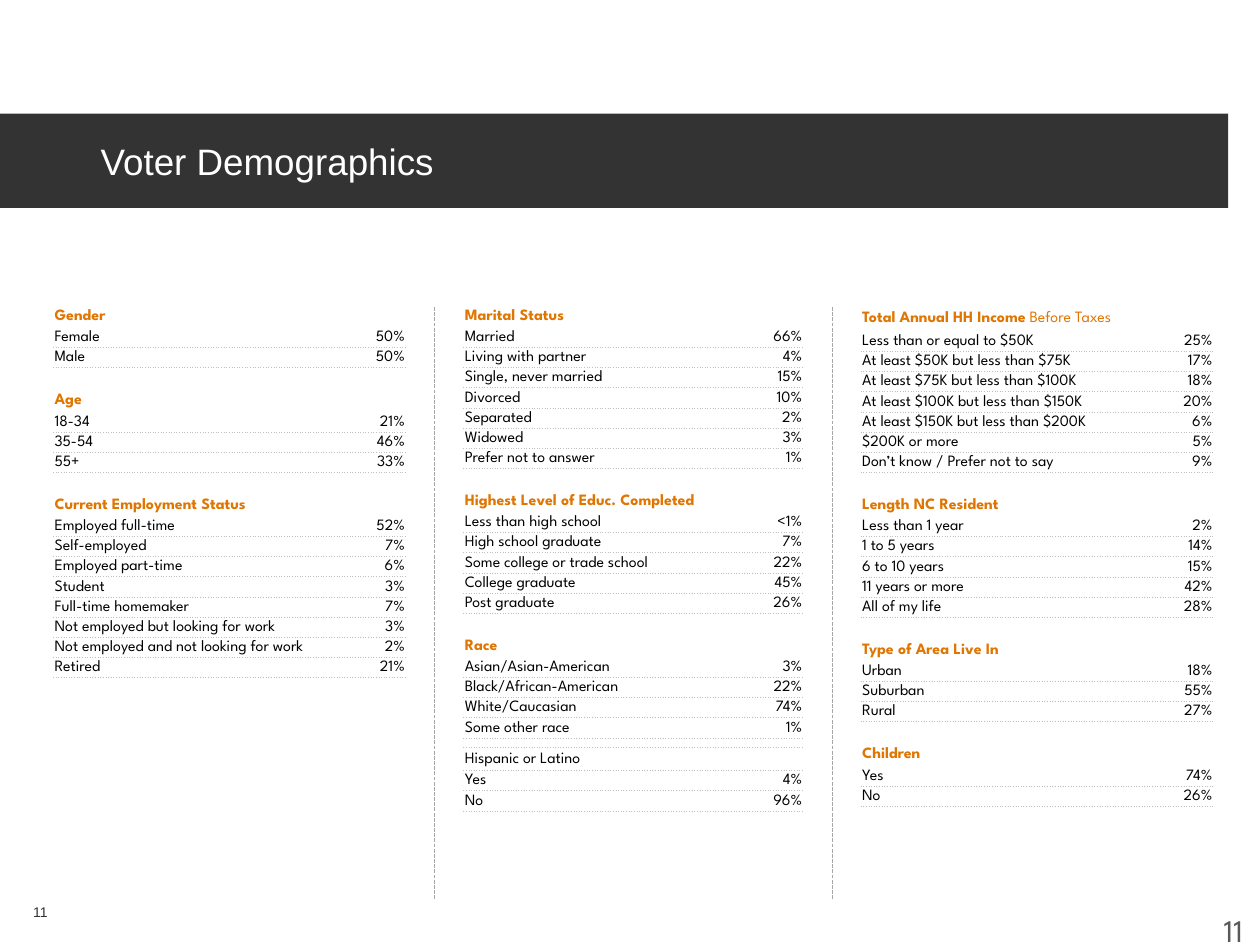
from dataclasses import dataclass

from lxml import etree
from pptx import Presentation
from pptx import util as u
from pptx.dml.color import RGBColor
from pptx.enum import dml, shapes, text
from pptx.oxml import parse_xml
from pptx.oxml.ns import nsdecls, qn


@dataclass(frozen=True)
class Theme:
    dark: str = "333333"
    light: str = "FFFFFF"
    ink: str = "000000"
    head: str = "E07602"
    page: str = "595959"
    rule: str = "BFBFBF"
    split: str = "A6A6A6"
    sans: str = "Arial"
    body: str = "League Spartan"
    title: float = 21
    large: float = 18
    small: float = 9
    foot: float = 8


LOOK = Theme()
LEFT, RIGHT = text.PP_ALIGN.LEFT, text.PP_ALIGN.RIGHT
PLAIN = "{2D5ABB26-0587-4C30-8999-92F81FD0307C}"
ROW, HEAD, GAP, SLIM, SUB = 0.4, 0.45, 0.44, 0.2, 0.46


def write(frame, words, size=LOOK.small, face=LOOK.body, color=LOOK.ink,
          bold=False, align=LEFT, space=None):
    para = frame.paragraphs[0]
    para.alignment = align
    if space:
        para.line_spacing = space
    for part, heavy in [(words, bold)] if isinstance(words, str) else words:
        run = para.add_run()
        run.text = part
        run.font.size = u.Pt(size)
        run.font.name = face
        run.font.bold = heavy
        run.font.color.rgb = RGBColor.from_string(color)


def inset(item, left, top, right, bottom):
    item.margin_left, item.margin_top = u.Cm(left), u.Cm(top)
    item.margin_right, item.margin_bottom = u.Cm(right), u.Cm(bottom)


class Deck:
    def __init__(self, look):
        self.look = look
        self.show = Presentation()
        self.show.slide_width = u.Cm(25.4)
        self.show.slide_height = u.Cm(19.05)
        self.page = self.show.slides.add_slide(self.show.slide_layouts[5])

    def title(self, words, box):
        bar = self.page.shapes.title
        bar.left, bar.top, bar.width, bar.height = map(u.Cm, box)
        bar.fill.solid()
        bar.fill.fore_color.rgb = RGBColor.from_string(self.look.dark)
        frame = bar.text_frame
        frame.auto_size = text.MSO_AUTO_SIZE.NONE
        frame.vertical_anchor = text.MSO_ANCHOR.MIDDLE
        inset(frame, 2.03, 0, 0, 0)
        write(frame, words, self.look.title, self.look.sans, self.look.light)

    def label(self, words, box, pad, **form):
        frame = self.page.shapes.add_textbox(*map(u.Cm, box)).text_frame
        frame.word_wrap = True
        inset(frame, *pad)
        write(frame, words, **form)

    def line(self, x, top, end):
        rule = self.page.shapes.add_connector(
            shapes.MSO_CONNECTOR.STRAIGHT, *map(u.Cm, (x, top, x, end)))
        rule.line.color.rgb = RGBColor.from_string(self.look.split)
        rule.line.width = u.Pt(0.75)
        rule.line.dash_style = dml.MSO_LINE.SQUARE_DOT
        etree.SubElement(rule._element.spPr, qn("a:effectLst"))

    def cell(self, cell, words, ruled, **form):
        cell.fill.background()
        cell.vertical_anchor = text.MSO_ANCHOR.MIDDLE
        if words:
            inset(cell, 0.03, 0.05, 0.03, 0.03)
            write(cell.text_frame, words, space=0.85, **form)
        else:
            inset(cell, 0, 0, 0, 0)
            para = cell.text_frame.paragraphs[0]._p
            etree.SubElement(para, qn("a:endParaRPr"), sz="100")
        if ruled:
            cell._tc.tcPr.insert(0, parse_xml(
                f'<a:lnB {nsdecls("a")} w="6350"><a:solidFill>'
                f'<a:srgbClr val="{self.look.rule}"/></a:solidFill>'
                '<a:prstDash val="sysDot"/></a:lnB>'))

    def table(self, groups, left, wides, top=6.15, first=HEAD):
        rows = []
        for head, items in groups:
            if rows:
                rows.append(("", "", GAP, False, False))
            rows.append((head, "", HEAD if rows else first, False, True))
            for name, share in items:
                high = ROW if share else SUB if name else SLIM
                rows.append((name, share, high, True, False))
        size = sum(wides), sum(row[2] for row in rows)
        frame = self.page.shapes.add_table(
            len(rows), 2, *map(u.Cm, (left, top, *size)))
        grid = frame.table
        grid.first_row = grid.horz_banding = False
        grid._tbl.tblPr.find(qn("a:tableStyleId")).text = PLAIN
        for col, wide in zip(grid.columns, wides):
            col.width = u.Cm(wide)
        for i, (name, share, high, ruled, head) in enumerate(rows):
            grid.rows[i].height = u.Cm(high)
            tint = self.look.head if head else self.look.ink
            self.cell(grid.cell(i, 0), name, ruled, color=tint, bold=head)
            self.cell(grid.cell(i, 1), share, ruled, align=RIGHT)


WORK = [
    ("Gender", [("Female", "50%"), ("Male", "50%")]),
    ("Age", [("18-34", "21%"), ("35-54", "46%"), ("55+", "33%")]),
    ("Current Employment Status", [
        ("Employed full-time", "52%"), ("Self-employed", "7%"),
        ("Employed part-time", "6%"), ("Student", "3%"),
        ("Full-time homemaker", "7%"),
        ("Not employed but looking for work", "3%"),
        ("Not employed and not looking for work", "2%"),
        ("Retired", "21%")]),
]
HOME = [
    ("Marital Status", [
        ("Married", "66%"), ("Living with partner", "4%"),
        ("Single, never married", "15%"), ("Divorced", "10%"),
        ("Separated", "2%"), ("Widowed", "3%"),
        ("Prefer not to answer", "1%")]),
    ("Highest Level of Educ. Completed", [
        ("Less than high school", "<1%"), ("High school graduate", "7%"),
        ("Some college or trade school", "22%"),
        ("College graduate", "45%"), ("Post graduate", "26%")]),
    ("Race", [
        ("Asian/Asian-American", "3%"), ("Black/African-American", "22%"),
        ("White/Caucasian", "74%"), ("Some other race", "1%"), ("", ""),
        ("Hispanic or Latino", ""), ("Yes", "4%"), ("No", "96%")]),
]
MEANS = [
    ([("Total Annual HH Income", True), (" Before Taxes", False)], [
        ("Less than or equal to $50K", "25%"),
        ("At least $50K but less than $75K", "17%"),
        ("At least $75K but less than $100K", "18%"),
        ("At least $100K but less than $150K", "20%"),
        ("At least $150K but less than $200K", "6%"),
        ("$200K or more", "5%"), ("Don’t know / Prefer not to say", "9%")]),
    ("Length NC Resident", [
        ("Less than 1 year", "2%"), ("1 to 5 years", "14%"),
        ("6 to 10 years", "15%"), ("11 years or more", "42%"),
        ("All of my life", "28%")]),
    ("Type of Area Live In", [
        ("Urban", "18%"), ("Suburban", "55%"), ("Rural", "27%")]),
    ("Children", [("Yes", "74%"), ("No", "26%")]),
]


def main():
    deck = Deck(LOOK)
    deck.title("Voter Demographics", (0, 2.29, 24.76, 1.9))
    deck.label("11", (0.67, 18.21, 4.45, 0.33), (0, 0, 0, 0),
               size=LOOK.foot, face=LOOK.sans, color=LOOK.dark)
    deck.label("11", (24.42, 18.24, 1.27, 1.02), (0.25, 0.13, 0.25, 0.13),
               size=LOOK.large, color=LOOK.page)
    deck.table(WORK, 1.07, (5.51, 1.61))
    deck.table(HOME, 9.34, (5.74, 1.12))
    deck.table(MEANS, 17.35, (5.94, 1.18), first=0.53)
    for x in (8.76, 16.78):
        deck.line(x, 6.19, 18.13)
    deck.show.save("out.pptx")


if __name__ == "__main__":
    main()
